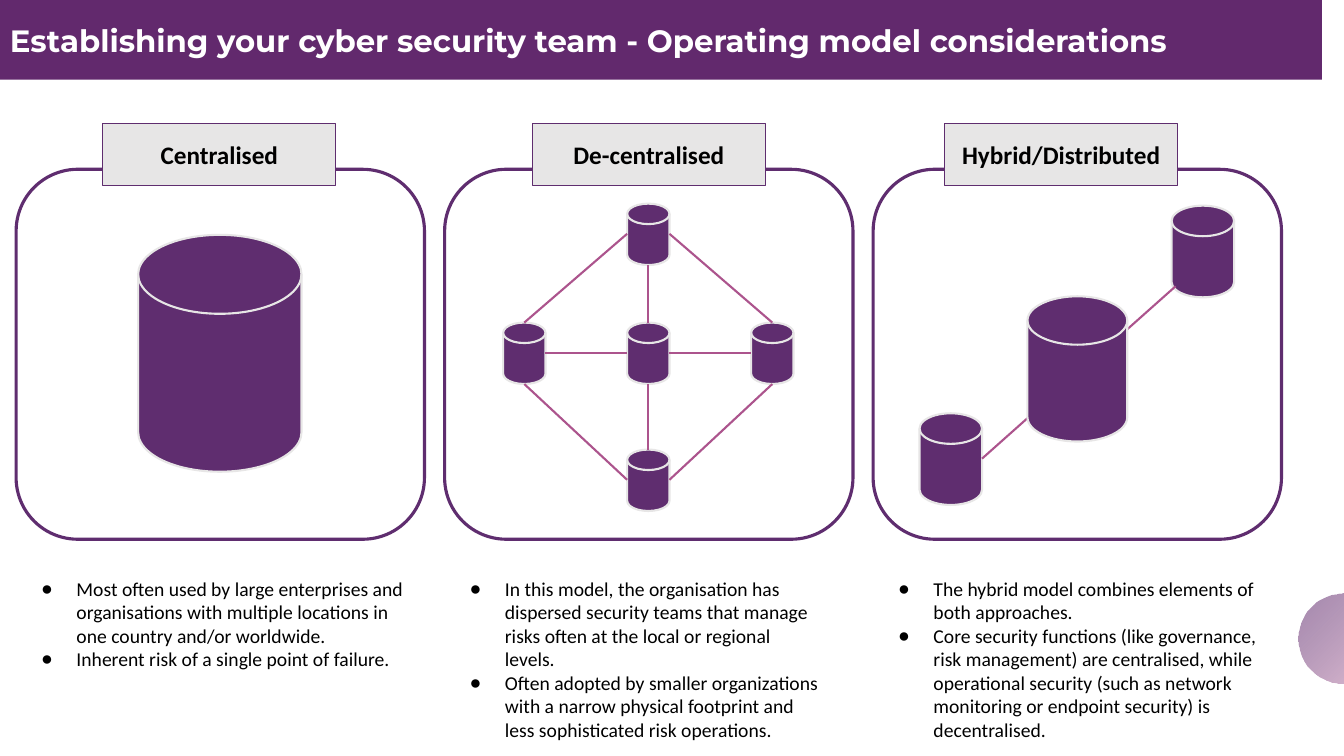
from dataclasses import dataclass

import lxml.etree
import pptx
import pptx.dml.color
import pptx.enum.shapes
import pptx.enum.text
import pptx.oxml
import pptx.oxml.ns
import pptx.util

PX = 9144  # one hundredth of an inch in EMU
SHAPES = pptx.enum.shapes.MSO_SHAPE
ALIGN = pptx.enum.text.PP_ALIGN
ANCHOR = pptx.enum.text.MSO_ANCHOR
qn = pptx.oxml.ns.qn


@dataclass(frozen=True)
class Theme:
    banner: str = "62296D"
    purple: str = "5F2D6F"
    pink: str = "AC548D"
    blush: str = "D3A5C3"
    grey: str = "E7E6E6"
    white: str = "FFFFFF"
    black: str = "000000"
    title_font: str = "Montserrat"
    body_font: str = "Calibri"
    title_size: int = 22
    label_size: int = 18
    body_size: int = 14


THEME = Theme()
PANEL_LEFT, PANEL_PITCH, PANEL_WIDTH = 16, 425, 405

PANELS = [
    # label, label left, list width, bullets
    ("Centralised", 102, 405, [
        "Most often used by large enterprises and organisations with multiple "
        "locations in one country and/or worldwide.",
        "Inherent risk of a single point of failure."]),
    ("De-centralised", 528, 387, [
        "In this model, the organisation has dispersed security teams that "
        "manage risks often at the local or regional levels.",
        "Often adopted by smaller organizations with a narrow physical "
        "footprint and less sophisticated risk operations."]),
    ("Hybrid/Distributed", 937, 405, [
        "The hybrid model combines elements of both approaches.",
        "Core security functions (like governance, risk management) are "
        "centralised, while operational security (such as network monitoring "
        "or endpoint security) is decentralised."]),
]


def rgb(value):
    return pptx.dml.color.RGBColor.from_string(value)


def emu(*lengths):
    return [length * PX for length in lengths]


def add_block(page, kind, bounds, fill, line=None, weight=1.0):
    block = page.shapes.add_shape(kind, *emu(*bounds))
    block.shadow.inherit = False
    block.fill.solid()
    block.fill.fore_color.rgb = rgb(fill)
    if line:
        block.line.color.rgb = rgb(line)
        block.line.width = pptx.util.Pt(weight)
    else:
        block.line.fill.background()
    return block


def set_text(box, paragraphs, font, size, color, bold=False,
             align=ALIGN.LEFT, anchor=ANCHOR.TOP, inset=10, bulleted=False):
    frame = box.text_frame
    frame.word_wrap = True
    frame.vertical_anchor = anchor
    frame.margin_left = frame.margin_right = 10 * PX
    frame.margin_top = frame.margin_bottom = inset * PX
    for index, text in enumerate(paragraphs):
        para = frame.paragraphs[0] if index == 0 else frame.add_paragraph()
        para.alignment = align
        if bulleted:
            add_bullet(para, color)
        span = para.add_run()
        span.text = text
        span.font.name = font
        span.font.size = pptx.util.Pt(size)
        span.font.bold = bold
        span.font.color.rgb = rgb(color)


def add_bullet(para, color):
    properties = para._p.get_or_add_pPr()
    properties.set("marL", str(50 * PX))
    properties.set("indent", str(-35 * PX))
    bullet_color = lxml.etree.SubElement(properties, qn("a:buClr"))
    lxml.etree.SubElement(bullet_color, qn("a:srgbClr"), val=color)
    lxml.etree.SubElement(properties, qn("a:buFont"), typeface="Arial")
    lxml.etree.SubElement(properties, qn("a:buChar"), char="●")


def add_disk(page, left, top, width, height):
    """Draw a cylinder and return its bounds."""
    bounds = (left, top, width, height)
    add_block(page, SHAPES.FLOWCHART_MAGNETIC_DISK, bounds,
              THEME.purple, THEME.grey, 1.5)
    return bounds


def edge(bounds, side):
    """Return the middle point of one side of the bounds."""
    left, top, width, height = bounds
    middle_x, middle_y = left + width // 2, top + height // 2
    return {"top": (middle_x, top), "bottom": (middle_x, top + height),
            "left": (left, middle_y), "right": (left + width, middle_y)}[side]


def add_link(page, start, end):
    link = page.shapes.add_connector(
        pptx.enum.shapes.MSO_CONNECTOR.STRAIGHT, *emu(*start, *end))
    link.line.color.rgb = rgb(THEME.pink)
    link.line.width = pptx.util.Pt(1.5)
    lxml.etree.SubElement(link._element.spPr, qn("a:effectLst"))


def add_corner_circle(page):
    circle = add_block(page, SHAPES.OVAL, (1288, 589, 89, 89), THEME.blush)
    stops = "".join(
        f'<a:gs pos="{place}"><a:srgbClr val="{color}">'
        f'<a:alpha val="{alpha}"/></a:srgbClr></a:gs>'
        for place, color, alpha in [(0, THEME.blush, 71000),
                                    (100000, THEME.purple, 56000)])
    gradient = pptx.oxml.parse_xml(
        f'<a:gradFill {pptx.oxml.ns.nsdecls("a")}><a:gsLst>{stops}</a:gsLst>'
        '<a:path path="circle"><a:fillToRect l="100000" t="100000"/></a:path>'
        '</a:gradFill>')
    properties = circle._element.spPr
    properties.replace(properties.find(qn("a:solidFill")), gradient)


def add_banner(page, text):
    banner = add_block(page, SHAPES.RECTANGLE, (0, 0, 1311, 79), THEME.banner)
    set_text(banner, [text], THEME.title_font, THEME.title_size, THEME.white,
             bold=True, anchor=ANCHOR.MIDDLE, inset=5)


def add_panel(page, left, label, label_left, list_width, bullets):
    add_block(page, SHAPES.ROUNDED_RECTANGLE, (left, 168, PANEL_WIDTH, 367),
              THEME.white, THEME.purple, 2.25)
    tab = add_block(page, SHAPES.RECTANGLE, (label_left, 123, 231, 61),
                    THEME.grey, THEME.purple, 0.75)
    set_text(tab, [label], THEME.body_font, THEME.label_size, THEME.black,
             bold=True, align=ALIGN.CENTER, anchor=ANCHOR.MIDDLE)
    box = page.shapes.add_textbox(*emu(left, 562, list_width, 119))
    set_text(box, bullets, THEME.body_font, THEME.body_size, THEME.black,
             bulleted=True)


def draw_centralised(page):
    add_disk(page, 137, 233, 162, 235)


def draw_decentralised(page):
    places = {"north": (622, 202), "centre": (622, 320), "south": (622, 446),
              "west": (499, 320), "east": (745, 320)}
    disks = {name: add_disk(page, left, top, 42, 61)
             for name, (left, top) in places.items()}
    for start, start_side, end, end_side in [
            ("north", "bottom", "centre", "top"),
            ("north", "left", "west", "top"),
            ("north", "right", "east", "top"),
            ("west", "bottom", "south", "left"),
            ("centre", "bottom", "south", "top"),
            ("east", "bottom", "south", "right"),
            ("west", "right", "centre", "left"),
            ("centre", "right", "east", "left")]:
        add_link(page, edge(disks[start], start_side),
                 edge(disks[end], end_side))


def draw_hybrid(page):
    lower = add_disk(page, 912, 410, 62, 91)
    add_disk(page, 1162, 204, 62, 91)
    add_link(page, edge(lower, "right"), (1166, 284))
    add_disk(page, 1019, 294, 99, 144)


def main():
    deck = pptx.Presentation()
    deck.slide_width, deck.slide_height = emu(1333, 750)
    page = deck.slides.add_slide(deck.slide_layouts[6])
    add_corner_circle(page)
    add_banner(page, "Establishing your cyber security team - "
                     "Operating model considerations")
    for index, panel in enumerate(PANELS):
        add_panel(page, PANEL_LEFT + index * PANEL_PITCH, *panel)
    draw_centralised(page)
    draw_decentralised(page)
    draw_hybrid(page)
    deck.save("out.pptx")


if __name__ == "__main__":
    main()
